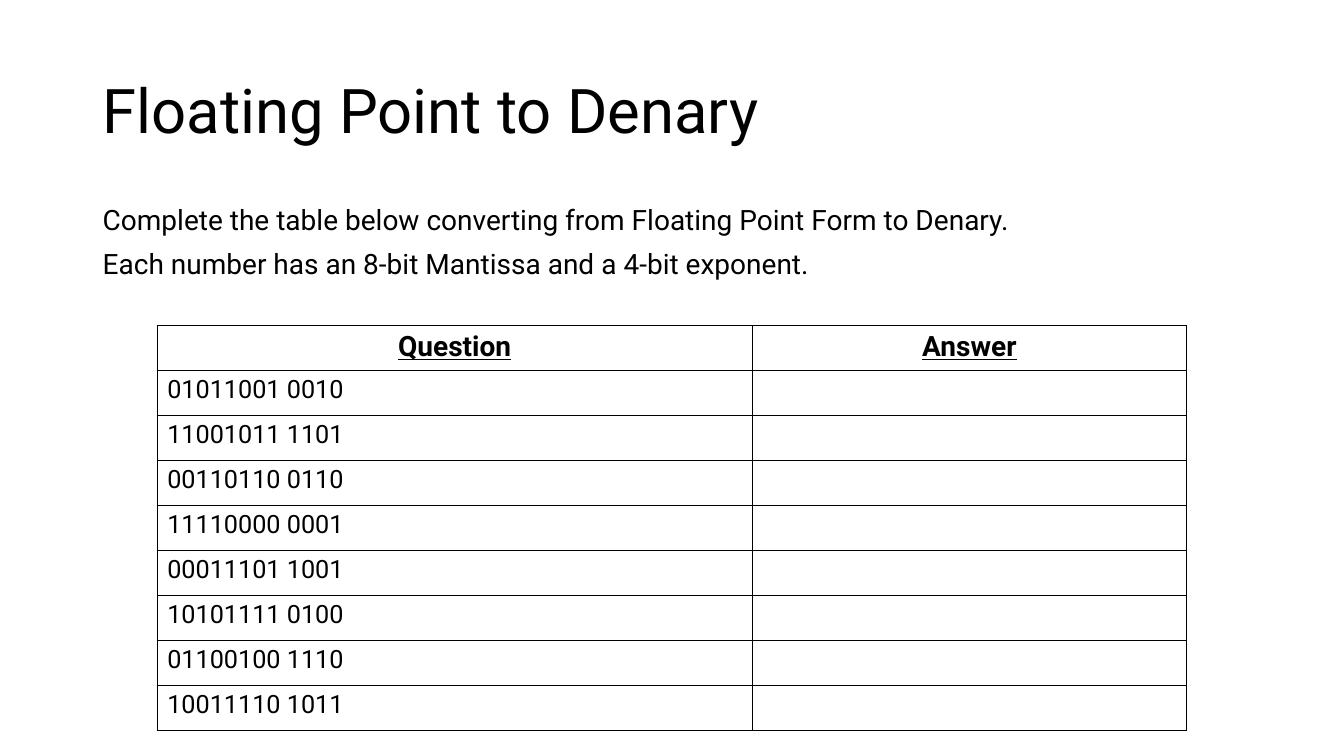
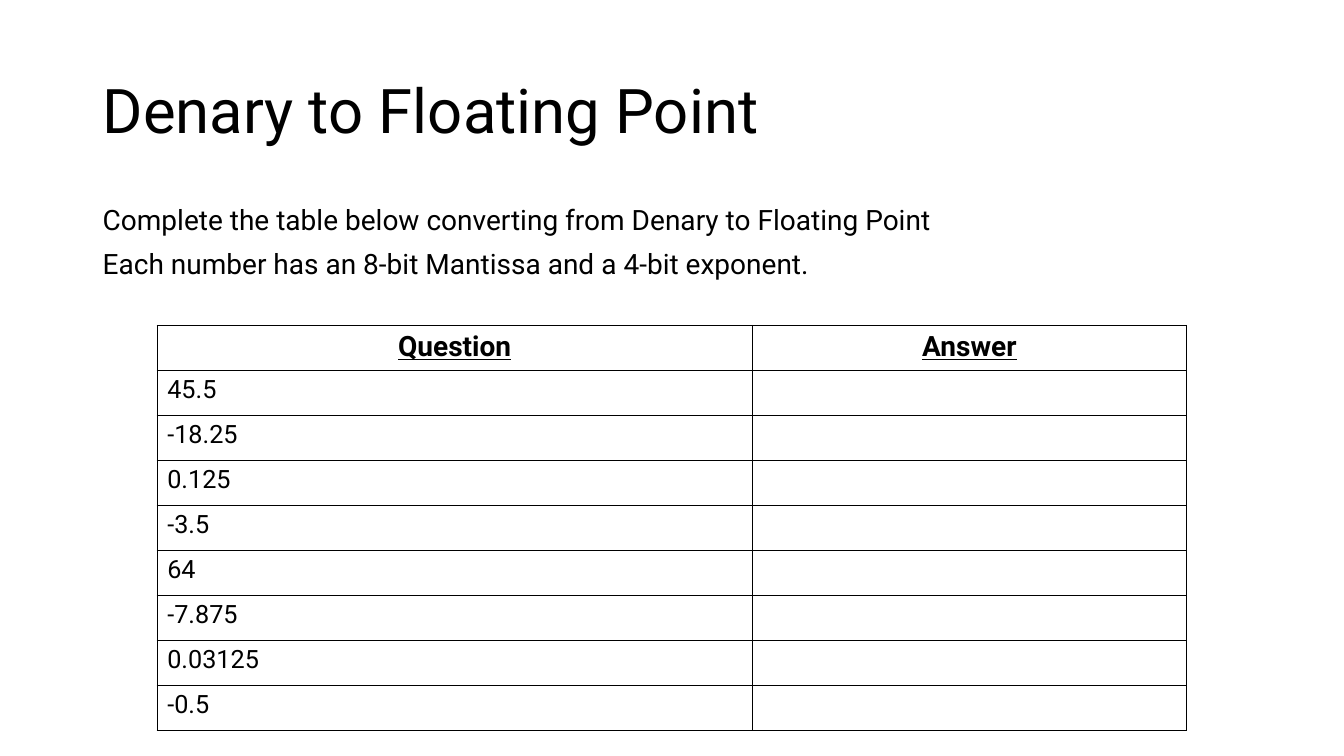
from lxml import etree
from pptx import Presentation
from pptx.dml.color import RGBColor
from pptx.enum.text import MSO_ANCHOR, PP_ALIGN
from pptx.oxml.ns import qn
from pptx.util import Inches, Pt

LEFT, CENTER = PP_ALIGN.LEFT, PP_ALIGN.CENTER
TOP, MIDDLE = MSO_ANCHOR.TOP, MSO_ANCHOR.MIDDLE
COLORS = {"text": "000000", "border": "000000"}
FONT = "Roboto"
BLANK_LAYOUT = 6

# Content of the two worksheets
FORMAT_NOTE = "Each number has an 8-bit Mantissa and a 4-bit exponent."
HEADERS = ("Question", "Answer")
WORKSHEETS = [
    (
        "Floating Point to Denary",
        "Complete the table below converting from Floating Point Form to Denary.",
        ["01011001 0010", "11001011 1101", "00110110 0110", "11110000 0001",
         "00011101 1001", "10101111 0100", "01100100 1110", "10011110 1011"],
    ),
    (
        "Denary to Floating Point",
        "Complete the table below converting from Denary to Floating Point",
        ["45.5", "-18.25", "0.125", "-3.5", "64", "-7.875", "0.03125", "-0.5"],
    ),
]


def write_text(paragraph, text, size=18, bold=False, underline=False,
               align=LEFT, line_spacing=None, space_before=0):
    paragraph.alignment = align
    paragraph.space_before = Pt(space_before)
    if line_spacing:
        paragraph.line_spacing = line_spacing
    run = paragraph.add_run()
    run.text = text
    font = run.font
    font.name, font.size = FONT, Pt(size)
    font.bold, font.underline = bold, underline
    font.color.rgb = RGBColor.from_string(COLORS["text"])


def set_borders(cell, width=1):
    properties = cell._tc.get_or_add_tcPr()
    for position, side in enumerate(("lnL", "lnR", "lnT", "lnB")):
        line = etree.Element(qn(f"a:{side}"), w=str(Pt(width)))
        fill = etree.SubElement(line, qn("a:solidFill"))
        etree.SubElement(fill, qn("a:srgbClr"), val=COLORS["border"])
        properties.insert(position, line)


class Deck:
    def __init__(self):
        self.presentation = Presentation()
        self.presentation.slide_width = Inches(13.33)
        self.presentation.slide_height = Inches(7.5)
        self.slide = None

    def add_slide(self):
        layout = self.presentation.slide_layouts[BLANK_LAYOUT]
        self.slide = self.presentation.slides.add_slide(layout)

    def add_text(self, lines, top, height, anchor=TOP, **text_format):
        shape = self.slide.shapes.add_textbox(
            Inches(0.92), Inches(top), Inches(11.5), Inches(height))
        frame = shape.text_frame
        frame.word_wrap = True
        frame.vertical_anchor = anchor
        for index, line in enumerate(lines):
            paragraph = frame.add_paragraph() if index else frame.paragraphs[0]
            write_text(paragraph, line, line_spacing=0.9, **text_format)

    def add_title(self, text):
        self.add_text([text], 0.4, 1.45, anchor=MIDDLE, size=44)

    def add_body(self, lines):
        self.add_text(lines, 2, 4.76, size=20, space_before=10)

    def add_question_table(self, questions):
        widths = (5.9, 4.31)
        shape = self.slide.shapes.add_table(
            len(questions) + 1, len(widths), Inches(1.56), Inches(3.23),
            Inches(sum(widths)), Inches(4.02))
        table = shape.table
        table.first_row = table.horz_banding = False
        for column, width in zip(table.columns, widths):
            column.width = Inches(width)
        for cell in table.iter_cells():
            cell.fill.background()
            set_borders(cell)

        # Header row, then one question per row with its answer left open
        for column, header in enumerate(HEADERS):
            write_text(table.cell(0, column).text_frame.paragraphs[0], header,
                       size=20, bold=True, underline=True, align=CENTER)
        for row, question in enumerate(questions, start=1):
            write_text(table.cell(row, 0).text_frame.paragraphs[0], question)


def main():
    deck = Deck()
    for title, instruction, questions in WORKSHEETS:
        deck.add_slide()
        deck.add_title(title)
        deck.add_body([instruction, FORMAT_NOTE])
        deck.add_question_table(questions)
    deck.presentation.save("out.pptx")


if __name__ == "__main__":
    main()
